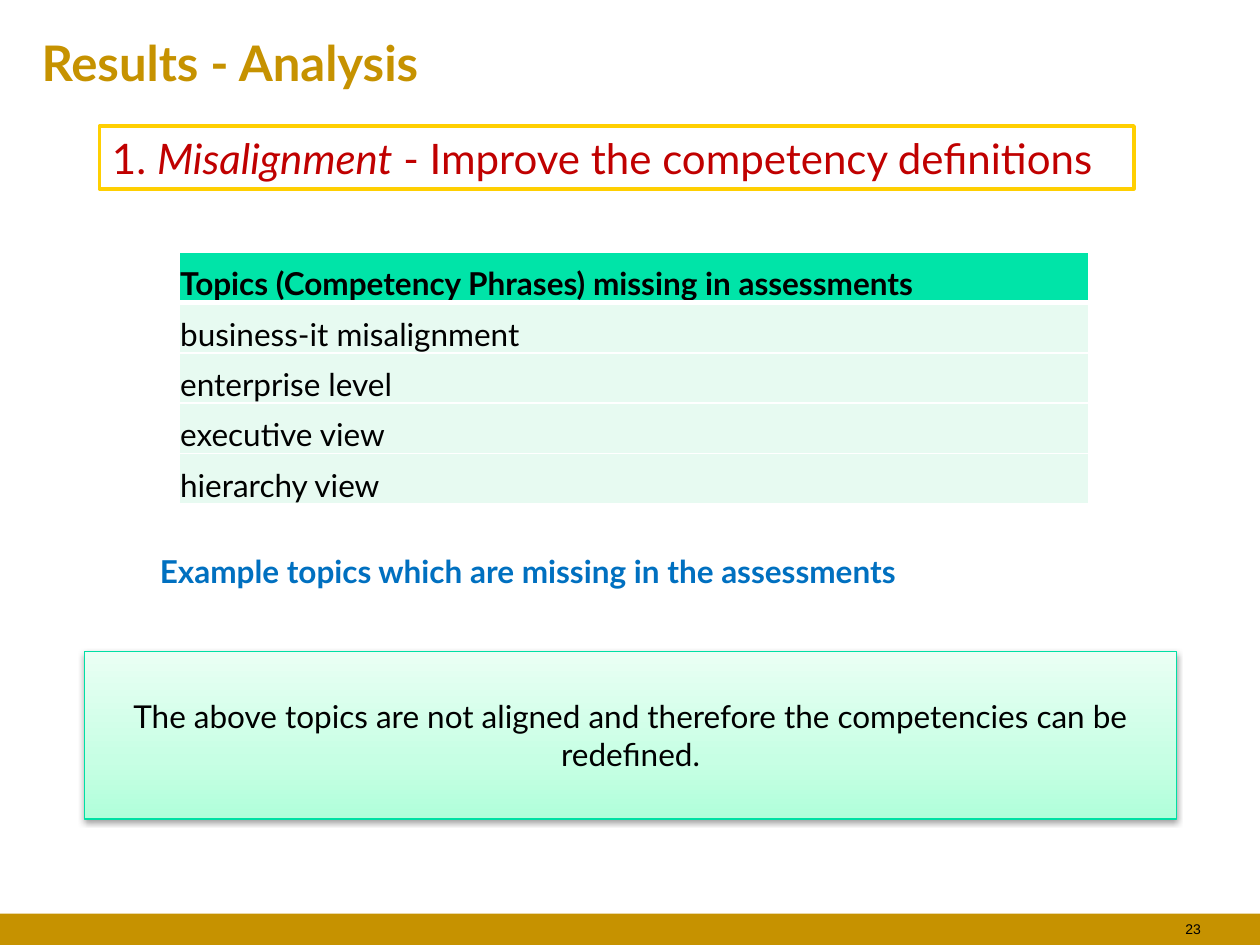
"""Build the results slide on topics missing in the assessments."""
from copy import deepcopy

from lxml.etree import SubElement
from pptx import Presentation
from pptx.dml.color import RGBColor
from pptx.enum.shapes import MSO_SHAPE
from pptx.enum.text import MSO_ANCHOR, PP_ALIGN
from pptx.oxml import parse_xml
from pptx.oxml.ns import nsdecls, qn
from pptx.util import Inches, Pt

GOLD = RGBColor(0xC6, 0x92, 0x00)
YELLOW = RGBColor(0xFF, 0xCF, 0x01)
RED = RGBColor(0xC0, 0x00, 0x00)
BLUE = RGBColor(0x00, 0x70, 0xC0)
BLACK = RGBColor(0x00, 0x00, 0x00)
WHITE = RGBColor(0xFF, 0xFF, 0xFF)
HEADER_GREEN = RGBColor(0x00, 0xE4, 0xA8)
ROW_GREEN = RGBColor(0xE7, 0xFA, 0xF1)
EDGE_GREEN = RGBColor(0x00, 0xDF, 0xA4)
GRADIENT = [
    (0, RGBColor(0xB0, 0xFF, 0xDA)),
    (0.35, RGBColor(0xC7, 0xFF, 0xE4)),
    (1, RGBColor(0xEA, 0xFF, 0xF4)),
]


def add_span(para, text, size, color, bold=False, italic=False, font="Lato"):
    span = para.add_run()
    span.text = text
    span.font.name = font
    span.font.size = Pt(size)
    span.font.bold = bold
    span.font.italic = italic
    span.font.color.rgb = color


def add_rectangle(page, left, top, width, height):
    box = page.shapes.add_shape(
        MSO_SHAPE.RECTANGLE, Inches(left), Inches(top), Inches(width), Inches(height)
    )
    box.shadow.inherit = False
    box.text_frame.word_wrap = True
    return box


deck = Presentation()
deck.slide_width = Inches(10)
deck.slide_height = Inches(7.5)
page = deck.slides.add_slide(deck.slide_layouts[5])

footer = add_rectangle(page, 0, 7.25, 10, 0.25)
footer.fill.solid()
footer.fill.fore_color.rgb = GOLD
footer.line.fill.background()

title = page.shapes.title
title.left, title.top = Inches(0.23), Inches(0.21)
title.width, title.height = Inches(9.54), Inches(0.57)
title.text_frame.vertical_anchor = MSO_ANCHOR.MIDDLE
para = title.text_frame.paragraphs[0]
para.alignment = PP_ALIGN.LEFT
add_span(para, "Results - Analysis", 28, GOLD, bold=True)

topics = [
    "Topics (Competency Phrases) missing in assessments",
    "business-it misalignment",
    "enterprise level",
    "executive view",
    "hierarchy view",
]
table = page.shapes.add_table(
    len(topics), 1, Inches(1.42), Inches(2), Inches(7.22), Inches(2)
).table
for index, topic in enumerate(topics):
    cell = table.cell(index, 0)
    properties = cell._tc.get_or_add_tcPr()
    widths = {"L": 1, "R": 1, "T": 3 if index == 1 else 1, "B": 3 if index == 0 else 1}
    for side, width in widths.items():
        border = SubElement(properties, qn(f"a:ln{side}"), w=str(Pt(width)))
        border_fill = SubElement(border, qn("a:solidFill"))
        SubElement(border_fill, qn("a:srgbClr"), val=str(WHITE))
    cell.fill.solid()
    cell.fill.fore_color.rgb = HEADER_GREEN if index == 0 else ROW_GREEN
    cell.margin_left = cell.margin_right = cell.margin_top = Inches(0.01)
    cell.margin_bottom = Inches(0)
    cell.vertical_anchor = MSO_ANCHOR.BOTTOM
    add_span(cell.text_frame.paragraphs[0], topic, 18, BLACK, bold=index == 0)

heading = add_rectangle(page, 0.79, 1, 8.21, 0.5)
heading.fill.solid()
heading.fill.fore_color.rgb = WHITE
heading.line.color.rgb = YELLOW
heading.line.width = Pt(2)
heading.text_frame.vertical_anchor = MSO_ANCHOR.TOP
para = heading.text_frame.paragraphs[0]
para.alignment = PP_ALIGN.LEFT
add_span(para, "1. ", 24, RED)
add_span(para, "Misalignment", 24, RED, italic=True)
add_span(para, " - Improve the competency definitions", 24, RED)

conclusion = add_rectangle(page, 0.67, 5.17, 8.67, 1.33)
conclusion.fill.gradient()
conclusion.fill.gradient_angle = 90
stop_list = conclusion._element.spPr.find(".//" + qn("a:gsLst"))
stop_list.append(deepcopy(stop_list[0]))
for stop, (position, color) in zip(conclusion.fill.gradient_stops, GRADIENT):
    stop.position = position
    stop.color.rgb = color
conclusion.line.color.rgb = EDGE_GREEN
conclusion.line.width = Pt(0.75)
conclusion._element.spPr.find(qn("a:effectLst")).append(parse_xml(
    f'<a:outerShdw {nsdecls("a")} blurRad="{Pt(3.1)}" dist="{Pt(1.6)}" dir="5400000" '
    'rotWithShape="0"><a:srgbClr val="000000"><a:alpha val="38000"/></a:srgbClr>'
    "</a:outerShdw>"
))
conclusion.text_frame.vertical_anchor = MSO_ANCHOR.MIDDLE
para = conclusion.text_frame.paragraphs[0]
para.alignment = PP_ALIGN.CENTER
add_span(
    para,
    "The above topics are not aligned and therefore the competencies can be redefined.",
    18,
    BLACK,
)

number = page.shapes.add_textbox(Inches(9.24), Inches(7.26), Inches(0.39), Inches(0.24))
number.text_frame.word_wrap = True
para = number.text_frame.paragraphs[0]
para.alignment = PP_ALIGN.RIGHT
add_span(para, "23", 8, BLACK, font="Arial")

caption = page.shapes.add_textbox(Inches(1.17), Inches(4.33), Inches(7.75), Inches(0.4))
caption.text_frame.word_wrap = True
add_span(
    caption.text_frame.paragraphs[0],
    "Example topics which are missing in the assessments",
    18,
    BLUE,
    bold=True,
)

deck.save("out.pptx")
